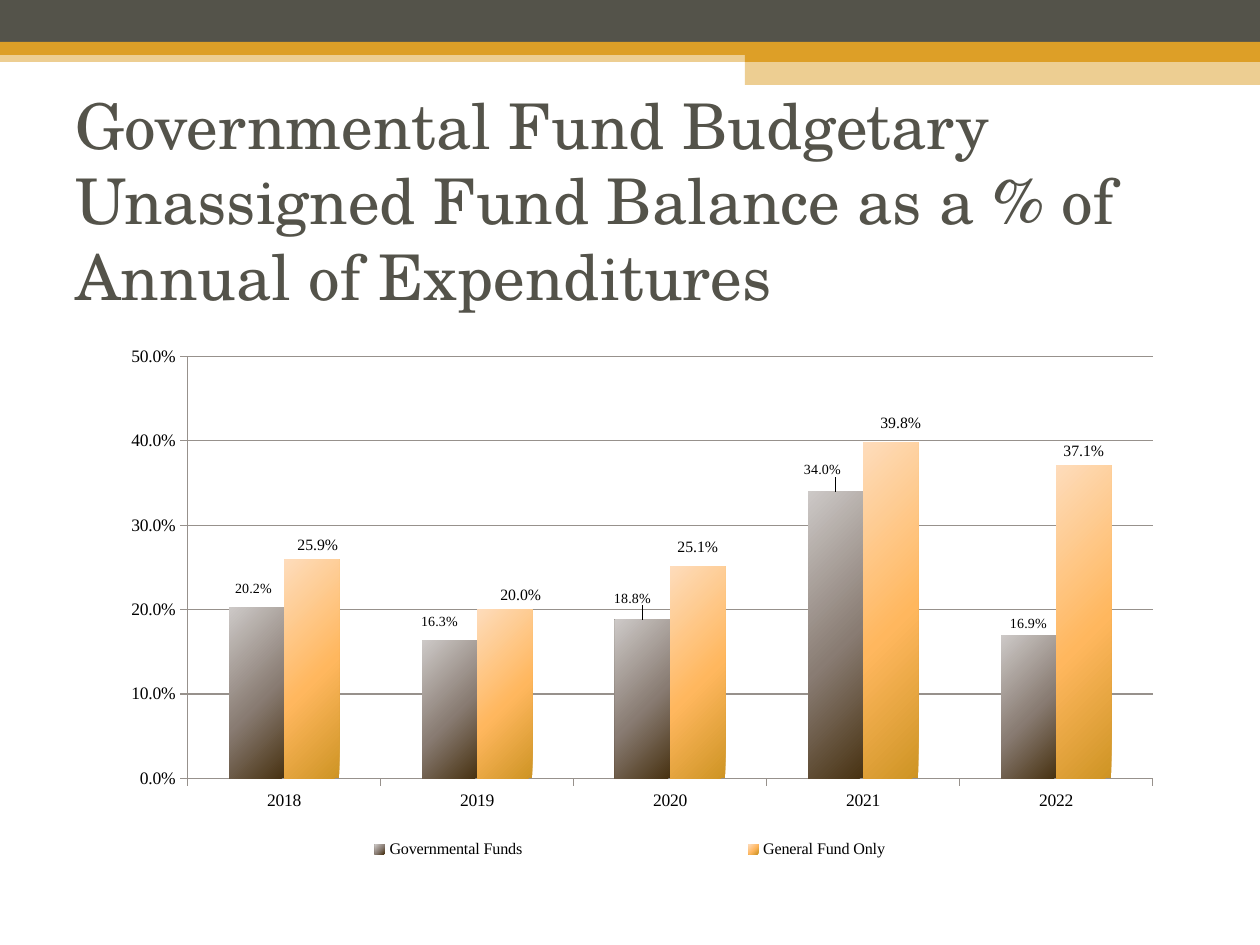
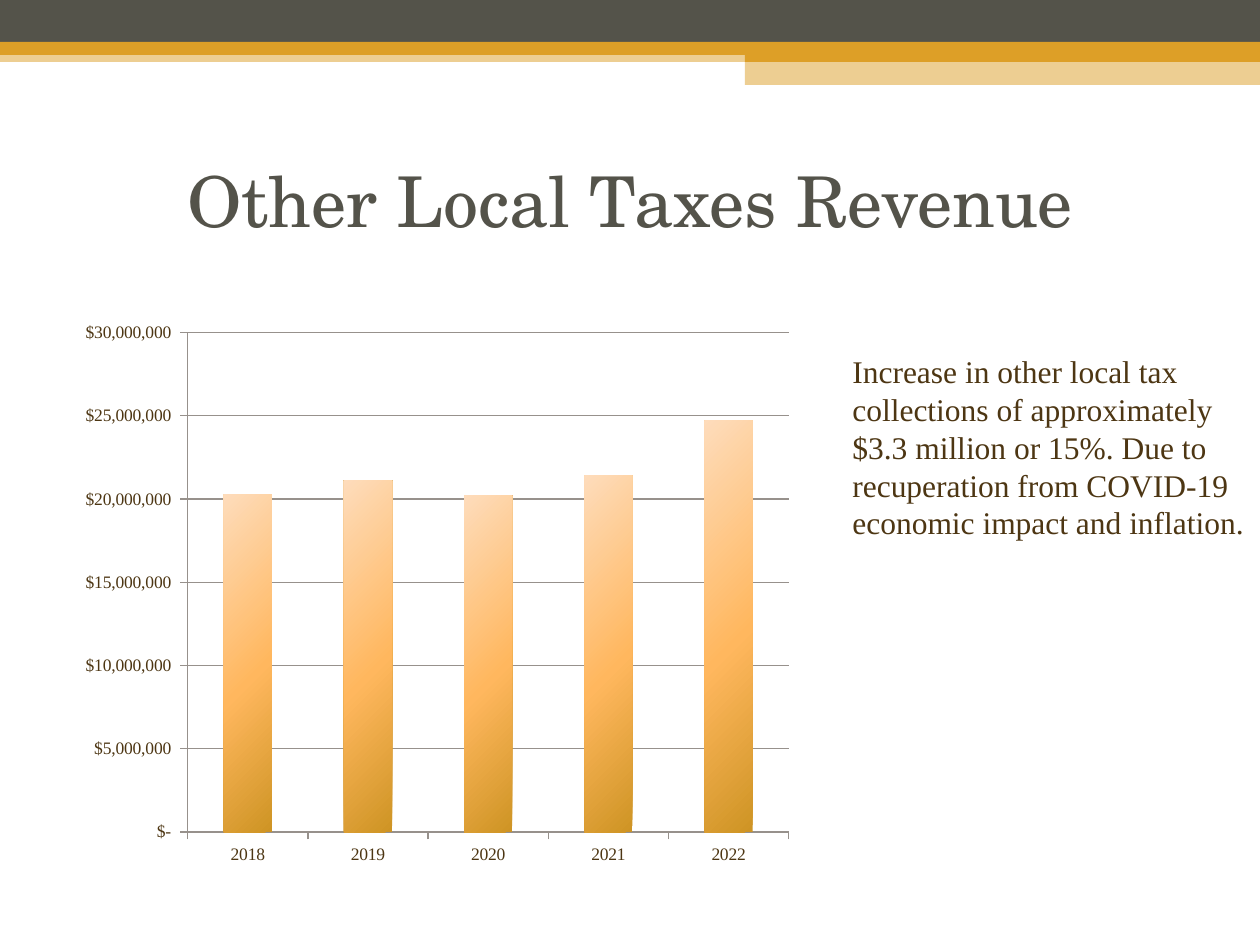
"""Build two budget slides with shared bands, titles and column charts."""
from lxml.etree import SubElement
from pptx import Presentation
from pptx.chart.data import CategoryChartData
from pptx.dml.color import RGBColor
from pptx.enum.chart import (XL_CHART_TYPE, XL_LABEL_POSITION, XL_LEGEND_POSITION,
                             XL_TICK_LABEL_POSITION, XL_TICK_MARK)
from pptx.enum.shapes import MSO_SHAPE
from pptx.enum.text import MSO_ANCHOR, PP_ALIGN
from pptx.oxml import parse_xml
from pptx.oxml.ns import nsdecls, qn
from pptx.util import Pt

PX = 914400 / 126
SLATE, GOLD, BROWN, BLACK, GREY = "54534A", "DD9F27", "4D3613", "000000", "97918C"
TITLE_FONT, BODY_FONT = "TeX Gyre Schola", "Times New Roman"
BROWN_GRADIENT = ((0, "CDC9C7"), (55, "897C73"), (100, "483212"))
ORANGE_GRADIENT = ((0, "FEDCBB"), (55, "FFB75E"), (100, "CE9424"))
YEARS = ["2018", "2019", "2020", "2021", "2022"]

BANDS = [
    ((0, 50, 1260, 12), GOLD, 50),
    ((0, 0, 1260, 42), SLATE, 100),
    ((0, 42, 1260, 13), GOLD, 100),
    ((745, 49, 515, 13), GOLD, 100),
    ((745, 62, 515, 23), GOLD, 50),
]
TITLE_BOX = (63, 126, 1134, 147)

SLIDES = [
    {
        "title": "Governmental Fund Budgetary Unassigned Fund Balance as a % of Annual of Expenditures",
        "title_size": 36,
        "title_align": PP_ALIGN.LEFT,
        "chart": {
            "box": (63, 310, 1134, 596),
            "color": BLACK,
            "plot": (0.11, 0.078, 0.851, 0.708),
            "legend": (0.08, 0.87, 0.84, 0.07),
            "format": "0.0%",
            "scale": {"minimum_scale": 0, "maximum_scale": 0.5, "major_unit": 0.1},
            "series": [
                {"name": "Governmental Funds", "gradient": BROWN_GRADIENT,
                 "values": [0.202, 0.163, 0.188, 0.34, 0.169], "label_size": 8,
                 "label_shifts": [(-3, -7), (-10, -7), (-10, -9), (-13, -9)]},
                {"name": "General Fund Only", "gradient": ORANGE_GRADIENT,
                 "values": [0.259, 0.2, 0.251, 0.398, 0.371], "label_size": 9,
                 "label_shifts": [(6, 0), (16, 0), (0, -5), (10, -5)]},
            ],
        },
    },
    {
        "title": "Other Local Taxes Revenue",
        "title_size": 40,
        "title_align": PP_ALIGN.CENTER,
        "chart": {
            "box": (63, 310, 756, 596),
            "color": BROWN,
            "plot": (0.165, 0.038, 0.795, 0.838),
            "format": '_(\\$* #,##0_);_(\\$* \\(#,##0\\);_(\\$* "-"_);_(@_)',
            "scale": {"minimum_scale": 0, "maximum_scale": 30000000, "major_unit": 5000000},
            "series": [
                {"name": "Series 1", "gradient": ORANGE_GRADIENT,
                 "values": [20300000, 21100000, 20200000, 21400000, 24700000]},
            ],
        },
        "note": "Increase in other local tax collections of approximately $3.3 million or 15%. "
                "Due to recuperation from COVID-19 economic impact and inflation.",
    },
]
NOTE_BOX = (840, 346, 420, 242)


def rgb(value):
    return RGBColor.from_string(value)


def emu(box):
    return [round(length * PX) for length in box]


def set_values(target, values):
    for name, value in values.items():
        setattr(target, name, value)


def set_font(font, size, color, name=BODY_FONT):
    set_values(font, {"size": Pt(size), "name": name})
    font.color.rgb = rgb(color)


def add_band(slide, box, color, opacity):
    shape = slide.shapes.add_shape(MSO_SHAPE.RECTANGLE, *emu(box))
    shape.shadow.inherit = False
    shape.fill.solid()
    shape.fill.fore_color.rgb = rgb(color)
    shape.line.fill.background()
    if opacity < 100:
        fill_color = shape.fill._xPr.find(qn("a:solidFill"))[0]
        SubElement(fill_color, qn("a:alpha"), val=str(opacity * 1000))


def add_text(slide, box, text, size, color, font=BODY_FONT,
             align=PP_ALIGN.LEFT, anchor=MSO_ANCHOR.TOP):
    frame = slide.shapes.add_textbox(*emu(box)).text_frame
    set_values(frame, {"word_wrap": True, "vertical_anchor": anchor})
    paragraph = frame.paragraphs[0]
    paragraph.alignment = align
    run = paragraph.add_run()
    run.text = text
    set_font(run.font, size, color, font)


def manual_layout(x, y, width=None, height=None, target=None, mode=None):
    parts = {"layoutTarget": target, "xMode": mode, "yMode": mode,
             "x": x, "y": y, "w": width, "h": height}
    body = "".join(f'<c:{tag} val="{value}"/>' for tag, value in parts.items() if value is not None)
    return parse_xml(f'<c:layout {nsdecls("c")}><c:manualLayout>{body}</c:manualLayout></c:layout>')


def set_gradient(series, stops):
    properties = series.format.fill._xPr
    stop_xml = "".join(f'<a:gs pos="{position * 1000}"><a:srgbClr val="{color}"/></a:gs>'
                       for position, color in stops)
    properties.insert(0, parse_xml(
        f'<a:gradFill {nsdecls("a")} rotWithShape="1"><a:gsLst>{stop_xml}</a:gsLst>'
        '<a:path path="circle"><a:fillToRect l="-40000" t="-90000" r="140000" b="190000"/>'
        '</a:path></a:gradFill>'))


def label_series(series, details, chart_details):
    labels = series.data_labels
    set_values(labels, {"show_value": True, "number_format": chart_details["format"],
                        "number_format_is_linked": False,
                        "position": XL_LABEL_POSITION.OUTSIDE_END})
    set_font(labels.font, details["label_size"], chart_details["color"])
    width, height = chart_details["box"][2:]
    for index, (right, down) in enumerate(details["label_shifts"]):
        label = series.points[index].data_label
        set_font(label.font, details["label_size"], chart_details["color"])
        label.position = XL_LABEL_POSITION.OUTSIDE_END
        layout = manual_layout(round(right / width, 4), round(down / height, 4))
        label._dLbl.find(qn("c:idx")).addnext(layout)


def add_column_chart(slide, details):
    data = CategoryChartData(number_format=details["format"])
    data.categories = YEARS
    for series in details["series"]:
        data.add_series(series["name"], series["values"])
    chart = slide.shapes.add_chart(XL_CHART_TYPE.COLUMN_CLUSTERED, *emu(details["box"]), data).chart
    set_values(chart, {"has_title": False, "has_legend": "legend" in details})
    set_font(chart.font, 10, details["color"])

    plot = chart.plots[0]
    set_values(plot, {"gap_width": 150, "overlap": 0, "vary_by_categories": False})
    plot_area = plot._element.getparent()
    for old_layout in plot_area.findall(qn("c:layout")):
        plot_area.remove(old_layout)
    plot_area.insert(0, manual_layout(*details["plot"], target="inner", mode="edge"))

    category_axis, value_axis = chart.category_axis, chart.value_axis
    for axis in (category_axis, value_axis):
        set_values(axis, {"major_tick_mark": XL_TICK_MARK.OUTSIDE,
                          "minor_tick_mark": XL_TICK_MARK.NONE})
        set_font(axis.tick_labels.font, 10, details["color"])
    category_axis.tick_label_position = XL_TICK_LABEL_POSITION.LOW
    set_values(value_axis, {"has_major_gridlines": True, **details["scale"]})
    set_values(value_axis.tick_labels, {"number_format": details["format"],
                                        "number_format_is_linked": False})
    for part in (category_axis, value_axis, value_axis.major_gridlines):
        part.format.line.width = Pt(0.75)
        part.format.line.color.rgb = rgb(GREY)

    for series, series_details in zip(plot.series, details["series"]):
        set_gradient(series, series_details["gradient"])
        if "label_shifts" in series_details:
            label_series(series, series_details, details)

    if chart.has_legend:
        legend = chart.legend
        set_values(legend, {"position": XL_LEGEND_POSITION.BOTTOM, "include_in_layout": False})
        set_font(legend.font, 9.2, details["color"])
        for old_layout in legend._element.findall(qn("c:layout")):
            legend._element.remove(old_layout)
        legend._element.find(qn("c:legendPos")).addnext(
            manual_layout(*details["legend"], mode="edge"))


def main():
    presentation = Presentation()
    set_values(presentation, dict(zip(("slide_width", "slide_height"), emu((1260, 945)))))
    for content in SLIDES:
        slide = presentation.slides.add_slide(presentation.slide_layouts[6])
        for band in BANDS:
            add_band(slide, *band)
        add_text(slide, TITLE_BOX, content["title"], content["title_size"], SLATE,
                 TITLE_FONT, content["title_align"], MSO_ANCHOR.MIDDLE)
        add_column_chart(slide, content["chart"])
        if "note" in content:
            add_text(slide, NOTE_BOX, content["note"], 18, BROWN)
    presentation.save("out.pptx")


if __name__ == "__main__":
    main()
